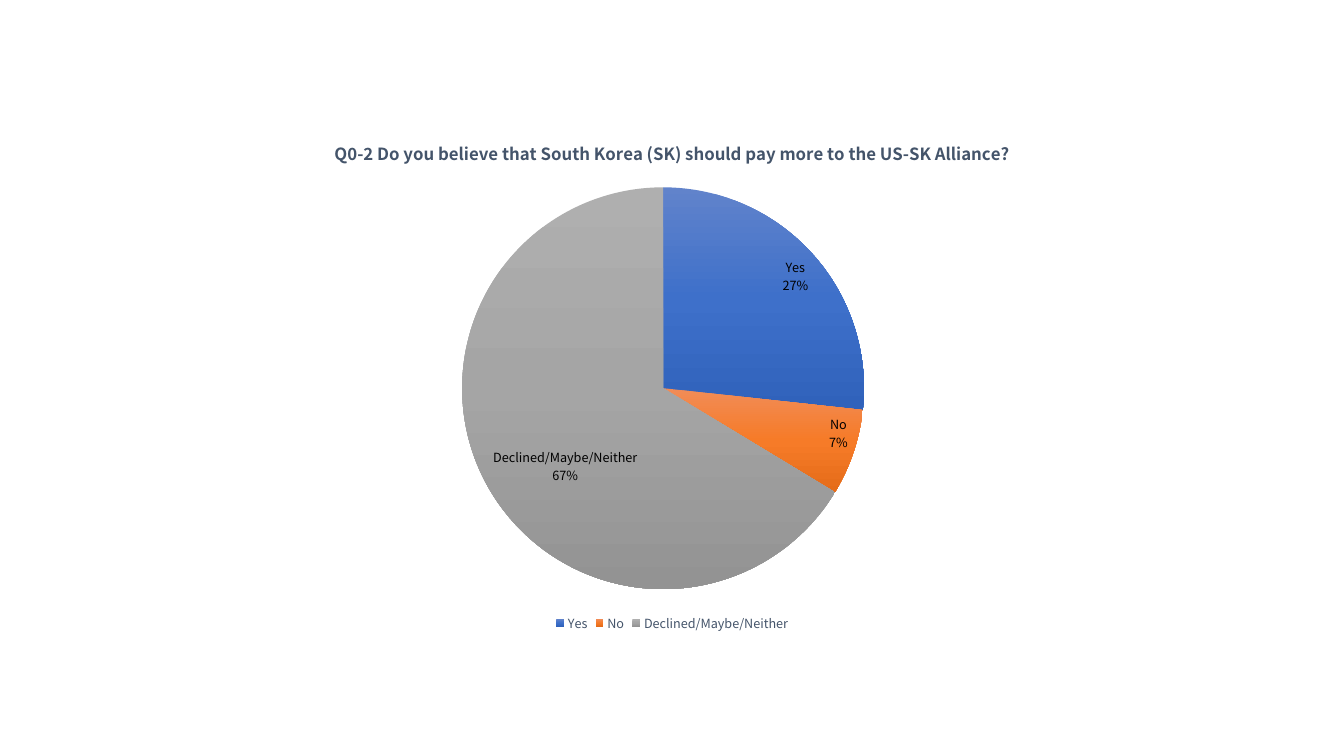
from copy import deepcopy

from pptx import Presentation
from pptx import util as u
from pptx.chart import data
from pptx.dml.color import RGBColor
from pptx.enum import chart as charts
from pptx.oxml import parse_xml
from pptx.oxml.ns import nsdecls, qn

FONT = "Noto Sans CJK KR"
BLACK = RGBColor(0x00, 0x00, 0x00)
SLATE = RGBColor(0x44, 0x54, 0x6A)
BLUES = [RGBColor(0x61, 0x83, 0xCB), RGBColor(0x3E, 0x70, 0xCA), RGBColor(0x30, 0x62, 0xBB)]
ORANGES = [RGBColor(0xF1, 0x8C, 0x57), RGBColor(0xF6, 0x7B, 0x28), RGBColor(0xE5, 0x6C, 0x19)]
GREYS = [RGBColor(0xAF, 0xAF, 0xAF), RGBColor(0xA5, 0xA5, 0xA5), RGBColor(0x93, 0x93, 0x93)]

QUESTION = "Q0-2 Do you believe that South Korea (SK) should pay more to the US-SK Alliance?"
ANSWERS = [
    ("Yes", 27, BLUES),
    ("No", 7, ORANGES),
    ("Declined/Maybe/Neither", 67, GREYS),
]


def style_font(font, size, color, bold=False):
    font.name = FONT
    font.size = u.Pt(size)
    font.bold = bold
    font.color.rgb = color


def fill_slice(point, colors):
    fill = point.format.fill
    fill.gradient()
    fill.gradient_angle = 270
    stop_list = point.format._element.find(".//" + qn("a:gsLst")) if hasattr(point.format, "_element") else None
    if stop_list is None:
        stop_list = list(point._ser.iter(qn("a:gsLst")))[-1]
    stop_list.append(deepcopy(stop_list[0]))
    for index, (stop, color) in enumerate(zip(fill.gradient_stops, colors)):
        stop.position = index / 2
        stop.color.rgb = color
    point.format.line.fill.background()


def place_plot(chart, left, top, width, height):
    plot_area = chart._chartSpace.find(".//" + qn("c:plotArea"))
    for layout in plot_area.findall(qn("c:layout")):
        plot_area.remove(layout)
    values = {"x": left, "y": top, "w": width, "h": height}
    parts = "".join(f'<c:{name} val="{value}"/>' for name, value in values.items())
    plot_area.insert(0, parse_xml(
        f'<c:layout {nsdecls("c")}><c:manualLayout><c:layoutTarget val="inner"/>'
        f'<c:xMode val="edge"/><c:yMode val="edge"/>{parts}</c:manualLayout></c:layout>'))


def label_slices(series):
    labels = series.data_labels
    labels.show_value = True
    labels.show_category_name = True
    labels.show_percentage = False
    labels.number_format = '0"%"'
    labels.number_format_is_linked = False
    labels.position = charts.XL_LABEL_POSITION.INSIDE_END
    style_font(labels.font, 9, BLACK)
    separator = parse_xml(f'<c:separator {nsdecls("c")}>\n</c:separator>')
    labels._element.find(qn("c:showBubbleSize")).addnext(separator)


def add_answer_pie(slide, left, top, width, height):
    chart_data = data.CategoryChartData()
    chart_data.categories = [name for name, _, _ in ANSWERS]
    chart_data.add_series(QUESTION, [share for _, share, _ in ANSWERS])
    chart = slide.shapes.add_chart(
        charts.XL_CHART_TYPE.PIE, left, top, width, height, chart_data).chart
    style_font(chart.font, 10, BLACK)

    chart.has_title = True
    run = chart.chart_title.text_frame.paragraphs[0].add_run()
    run.text = QUESTION
    style_font(run.font, 12, SLATE, bold=True)
    chart.chart_title.include_in_layout = False

    chart.has_legend = True
    chart.legend.position = charts.XL_LEGEND_POSITION.BOTTOM
    chart.legend.include_in_layout = False
    style_font(chart.legend.font, 9, SLATE)

    plot = chart.plots[0]
    plot.vary_by_categories = True
    series = plot.series[0]
    for index, (_, _, colors) in enumerate(ANSWERS):
        fill_slice(series.points[index], colors)
    label_slices(series)
    place_plot(chart, 0.27, 0.13, 0.44, 0.78)


def main():
    presentation = Presentation()
    presentation.slide_width = u.Pt(960)
    presentation.slide_height = u.Pt(540)
    slide = presentation.slides.add_slide(presentation.slide_layouts[6])
    add_answer_pie(slide, u.Pt(154), u.Pt(85.7), u.Pt(652.3), u.Pt(368.6))
    presentation.save("out.pptx")


if __name__ == "__main__":
    main()
